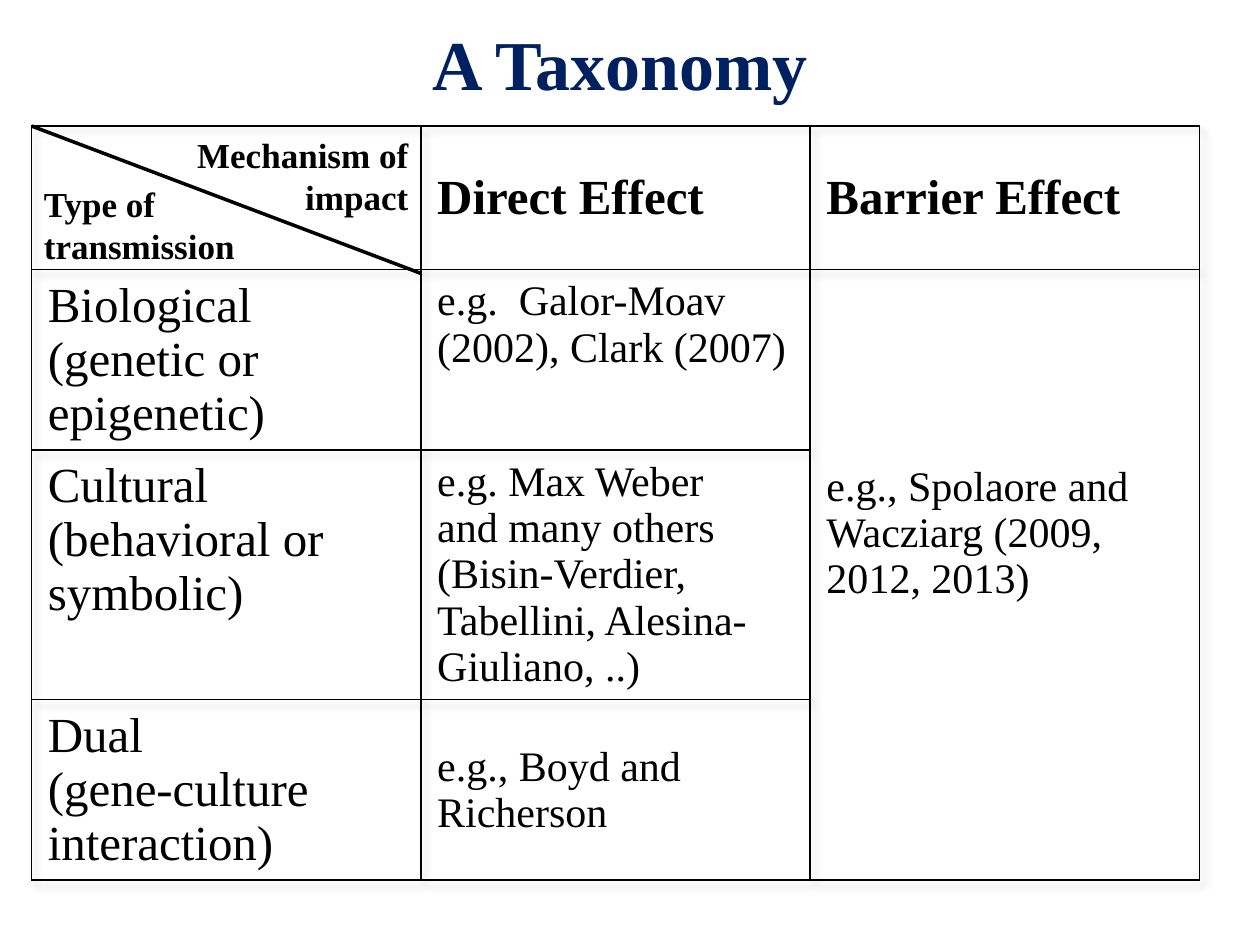
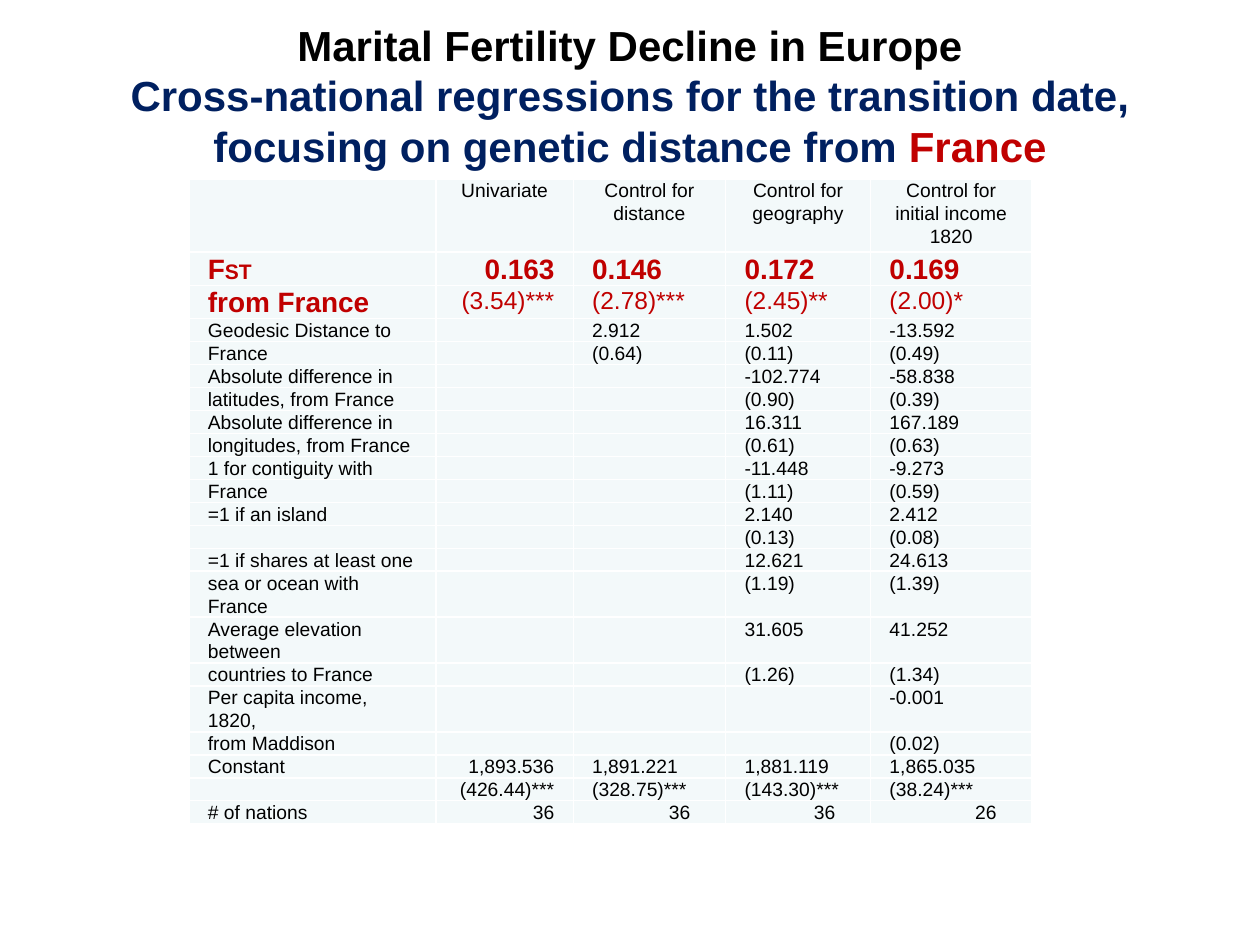
from lxml import etree
from pptx import Presentation
from pptx.dml.color import RGBColor
from pptx.enum.shapes import MSO_CONNECTOR
from pptx.enum.text import MSO_ANCHOR, PP_ALIGN
from pptx.oxml import parse_xml
from pptx.oxml.ns import nsdecls, qn
from pptx.util import Inches, Pt

STRAIGHT = MSO_CONNECTOR.STRAIGHT
TOP, MIDDLE = MSO_ANCHOR.TOP, MSO_ANCHOR.MIDDLE
LEFT, CENTER, RIGHT = PP_ALIGN.LEFT, PP_ALIGN.CENTER, PP_ALIGN.RIGHT

BLACK = RGBColor(0x00, 0x00, 0x00)
WHITE = RGBColor(0xFF, 0xFF, 0xFF)
NAVY = RGBColor(0x00, 0x20, 0x60)
RED = RGBColor(0xC0, 0x00, 0x00)
PALE = RGBColor(0xF3, 0xF9, 0xFA)
SERIF, SANS = "Times New Roman", "Arial"
TITLE_ONLY = 5

TAXONOMY_ROWS = [
    (["Biological", "(genetic or epigenetic)"],
     ["e.g.  Galor-Moav (2002), Clark (2007)"]),
    (["Cultural", "(behavioral or", "symbolic)"],
     ["e.g. Max Weber",
      "and many others (Bisin-Verdier, Tabellini, Alesina-Giuliano, ..)"]),
    (["Dual", "(gene-culture interaction)"],
     ["e.g., Boyd and Richerson"]),
]

MODELS = ["Univariate", "Control for distance", "Control for geography",
          "Control for initial income 1820"]
# Label, then the values of the last models that include the variable
REGRESSION_ROWS = [
    ("F", "0.163", "0.146", "0.172", "0.169"),
    ("from France", "(3.54)***", "(2.78)***", "(2.45)**", "(2.00)*"),
    ("Geodesic Distance to", "2.912", "1.502", "-13.592"),
    ("France", "(0.64)", "(0.11)", "(0.49)"),
    ("Absolute difference in", "-102.774", "-58.838"),
    ("latitudes, from France", "(0.90)", "(0.39)"),
    ("Absolute difference in", "16.311", "167.189"),
    ("longitudes, from France", "(0.61)", "(0.63)"),
    ("1 for contiguity with", "-11.448", "-9.273"),
    ("France", "(1.11)", "(0.59)"),
    ("=1 if an island", "2.140", "2.412"),
    ("", "(0.13)", "(0.08)"),
    ("=1 if shares at least one", "12.621", "24.613"),
    ("sea or ocean with France", "(1.19)", "(1.39)"),
    ("Average elevation between", "31.605", "41.252"),
    ("countries to France", "(1.26)", "(1.34)"),
    ("Per capita income, 1820,", "-0.001"),
    ("from Maddison", "(0.02)"),
    ("Constant", "1,893.536", "1,891.221", "1,881.119", "1,865.035"),
    ("", "(426.44)***", "(328.75)***", "(143.30)***", "(38.24)***"),
    ("# of nations", "36", "36", "36", "26"),
]


def format_paragraph(paragraph, face, size, color=BLACK, bold=False, align=LEFT):
    paragraph.alignment = align
    font = paragraph.font
    font.name, font.size, font.bold = face, Pt(size), bold
    font.color.rgb = color


def add_title(slide, box, runs, face, size):
    """Fill the title from (text, colour) runs; None stands for a line break."""
    title = slide.shapes.title
    title.left, title.top, title.width, title.height = map(Inches, box)
    frame = title.text_frame
    frame.vertical_anchor, frame.word_wrap = MIDDLE, True
    paragraph = frame.paragraphs[0]
    format_paragraph(paragraph, face, size, bold=True, align=CENTER)
    for piece in runs:
        if piece is None:
            paragraph.add_line_break()
            continue
        run = paragraph.add_run()
        run.text, run.font.color.rgb = piece


def add_plain_table(slide, left, top, widths, heights):
    frame = slide.shapes.add_table(len(heights), len(widths), Inches(left), Inches(top),
                                   Inches(sum(widths)), Inches(sum(heights)))
    table = frame.table
    table.first_row = table.horz_banding = False
    for column, width in zip(table.columns, widths):
        column.width = Inches(width)
    for row, height in zip(table.rows, heights):
        row.height = Inches(height)
    return table


def format_cell(cell, margin_x, margin_y, border, fill=None):
    cell.margin_left = cell.margin_right = Inches(margin_x)
    cell.margin_top = cell.margin_bottom = Inches(margin_y)
    properties = cell._tc.get_or_add_tcPr()
    for side in ("lnL", "lnR", "lnT", "lnB"):
        properties.append(parse_xml(
            f'<a:{side} {nsdecls("a")} w="12700"><a:solidFill>'
            f'<a:srgbClr val="{border}"/></a:solidFill></a:{side}>'))
    if fill is None:
        cell.fill.background()
    else:
        cell.fill.solid()
        cell.fill.fore_color.rgb = fill


def write_lines(frame, lines, size, bold=False, align=LEFT):
    frame.text = "\n".join(lines)
    for paragraph in frame.paragraphs:
        format_paragraph(paragraph, SERIF, size, bold=bold, align=align)


def add_corner(slide, left, top, width, height):
    """Diagonally split header cell with a label on each side."""
    corner = slide.shapes.add_group_shape()
    diagonal = corner.shapes.add_connector(
        STRAIGHT, Inches(left), Inches(top), Inches(left + width), Inches(top + height))
    diagonal.line.color.rgb, diagonal.line.width = BLACK, Pt(2)
    etree.SubElement(diagonal._element.spPr, qn("a:effectLst"))
    label_width, label_height = 1.94, 0.77
    labels = [
        ("Type of transmission", left, top + height - label_height, LEFT),
        ("Mechanism of impact", left + width - label_width, top + 0.01, RIGHT),
    ]
    for text, x, y, align in labels:
        label = corner.shapes.add_textbox(Inches(x), Inches(y), Inches(label_width),
                                          Inches(label_height))
        label.text_frame.word_wrap = True
        write_lines(label.text_frame, [text], 20, bold=True, align=align)


def add_taxonomy_table(slide, left, top):
    widths, heights = [3.09] * 3, [1.14, 1.43, 1.98, 1.42]
    table = add_plain_table(slide, left, top, widths, heights)
    table._tbl.tblPr.insert(0, parse_xml(
        f'<a:effectLst {nsdecls("a")}><a:outerShdw blurRad="50800" dist="50800" '
        'dir="2700000" algn="tl"><a:srgbClr val="000000"><a:alpha val="15000"/>'
        '</a:srgbClr></a:outerShdw></a:effectLst>'))
    for cell in table.iter_cells():
        format_cell(cell, 0.13, 0.07, BLACK)
        write_lines(cell.text_frame, [""], 24)

    # Column heads
    for column, effect in enumerate(["Direct Effect", "Barrier Effect"], start=1):
        head = table.cell(0, column)
        head.vertical_anchor = MIDDLE
        write_lines(head.text_frame, [effect], 28, bold=True)

    # Transmission types with their direct-effect studies
    for row, (transmission, studies) in enumerate(TAXONOMY_ROWS, start=1):
        write_lines(table.cell(row, 0).text_frame, transmission, 28)
        write_lines(table.cell(row, 1).text_frame, studies, 24)
    table.cell(3, 1).margin_top = Inches(0.35)

    # Barrier studies span all transmission types
    barrier = table.cell(1, 2)
    barrier.merge(table.cell(3, 2))
    barrier.margin_top = Inches(1.54)
    write_lines(barrier.text_frame, ["e.g., Spolaore and Wacziarg (2009, 2012, 2013)"], 24)
    add_corner(slide, left, top, widths[0], 1.17)


def write_figure(cell, text, size=11, color=BLACK, bold=False, align=LEFT):
    format_cell(cell, 0.15, 0, WHITE, PALE)
    cell.vertical_anchor = TOP
    paragraph = cell.text_frame.paragraphs[0]
    format_paragraph(paragraph, SANS, size, color, bold, align)
    paragraph.line_spacing = 1.07
    if text:
        paragraph.add_run().text = text
    else:
        etree.SubElement(paragraph._p, qn("a:endParaRPr"), sz=str(size * 100))
    return paragraph


def add_regression_table(slide, left, top):
    heights = [0.58, 0.26, 0.26] + [0.18] * (len(REGRESSION_ROWS) - 2)
    table = add_plain_table(slide, left, top, [1.96, 1.09, 1.21, 1.15, 1.28], heights)

    # Model heads
    for column, model in enumerate(["", *MODELS]):
        head = write_figure(table.cell(0, column), model, align=CENTER)
        head.space_before = head.space_after = Pt(4)

    # Coefficients and t-statistics; the first pair is emphasised
    last = len(REGRESSION_ROWS)
    for row, (variable, *values) in enumerate(REGRESSION_ROWS, start=1):
        key = row <= 2
        color = RED if key else BLACK
        label = write_figure(table.cell(row, 0), variable, 16 if key else 11, color, key)
        if row == 1:
            subscript = label.add_run()
            subscript.text, subscript.font.size = "ST", Pt(12)
        value_size = {1: 16, 2: 14}.get(row, 11)
        padded = [""] * (len(MODELS) - len(values)) + values
        for column, value in enumerate(padded, start=1):
            align = RIGHT if column == 1 or row == last else LEFT
            write_figure(table.cell(row, column), value, value_size, color, row == 1, align)
            if row == last and column > 1:
                table.cell(row, column).margin_right = Inches(0.28)


def build_taxonomy(slide):
    add_title(slide, (0.42, 0, 9, 1), [("A Taxonomy", NAVY)], SERIF, 40)
    add_taxonomy_table(slide, 0.25, 1)


def build_fertility(slide):
    add_title(slide, (0.5, 0.17, 9, 1.17), [
        ("Marital Fertility Decline in Europe", BLACK),
        None,
        ("Cross-national regressions for the transition date, "
         "focusing on genetic distance from ", NAVY),
        ("France", RED),
    ], SANS, 24)
    add_regression_table(slide, 1.5, 1.42)


def main():
    deck = Presentation()
    deck.slide_width, deck.slide_height = Inches(10), Inches(7.5)
    for build in (build_taxonomy, build_fertility):
        build(deck.slides.add_slide(deck.slide_layouts[TITLE_ONLY]))
    deck.save("out.pptx")


if __name__ == "__main__":
    main()
